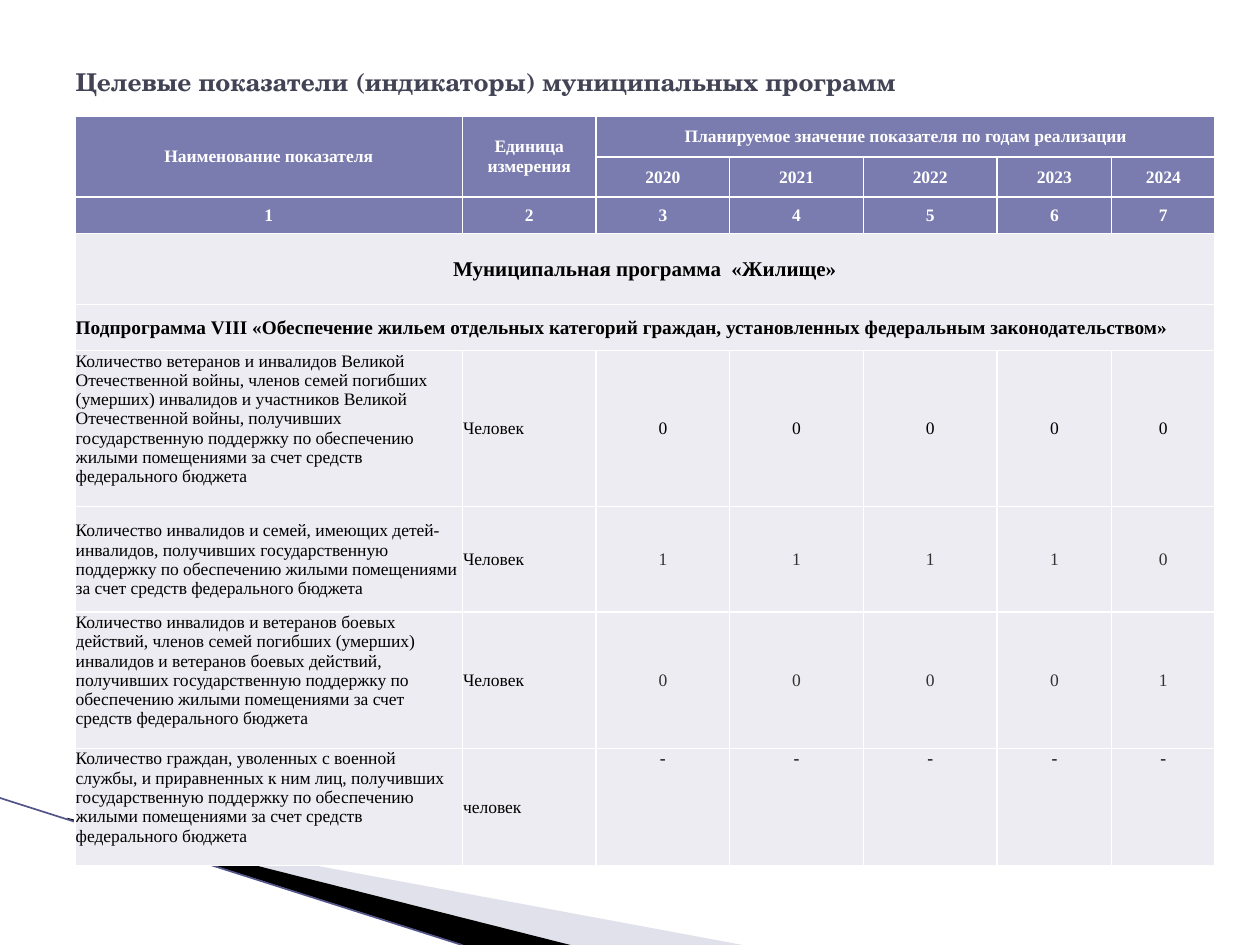
"""Build the slide with the target indicators of the housing programme."""
from dataclasses import dataclass

from lxml import etree
from pptx import Presentation
from pptx.dml.color import RGBColor
from pptx.enum.shapes import MSO_CONNECTOR
from pptx.enum.text import MSO_ANCHOR, MSO_AUTO_SIZE, PP_ALIGN
from pptx.oxml.ns import qn
from pptx.util import Pt

TOP, MIDDLE = MSO_ANCHOR.TOP, MSO_ANCHOR.MIDDLE
LEFT, CENTER, JUSTIFY = PP_ALIGN.LEFT, PP_ALIGN.CENTER, PP_ALIGN.JUSTIFY
STRAIGHT = MSO_CONNECTOR.STRAIGHT
NO_AUTOFIT = MSO_AUTO_SIZE.NONE

TITLE_FONT, TABLE_FONT = "TeX Gyre Schola", "Times New Roman"
WHITE, BLACK, GREY = "FFFFFF", "000000", "333333"
HEADER_FILL, BODY_FILL = "7A7BAE", "ECECF2"

COLUMN_WIDTHS = [221.4, 76.4, 76.4, 76.4, 76.4, 65.5, 59]
ROW_HEIGHTS = [23.4, 22.9, 21.1, 40.6, 26.3, 89.1, 60.3, 78, 66.9]
FIRST_INDICATOR_ROW = 5


@dataclass
class Style:
    size: float = 10
    color: str = BLACK
    bold: bool = False
    align: PP_ALIGN = CENTER
    anchor: MSO_ANCHOR = MIDDLE
    font: str = TABLE_FONT


@dataclass
class Heading:
    row: int
    column: int
    text: str
    style: Style
    rows: int = 1
    columns: int = 1


@dataclass
class Indicator:
    name: str
    unit: str
    values: list[str]
    name_anchor: MSO_ANCHOR = TOP
    value_color: str = BLACK
    value_anchor: MSO_ANCHOR = MIDDLE


@dataclass
class Wedge:
    points: list[tuple[float, float]]
    fill: str
    opacity: int = 100


HEADER = Style(color=WHITE, bold=True)
HEADINGS = [
    Heading(0, 0, "Наименование показателя", HEADER, rows=2),
    Heading(0, 1, "Единица измерения", HEADER, rows=2),
    Heading(0, 2, "Планируемое значение показателя по годам реализации", HEADER, columns=5),
    *[Heading(1, column, str(2018 + column), HEADER) for column in range(2, 7)],
    *[Heading(2, column, str(column + 1), HEADER) for column in range(7)],
    Heading(3, 0, "Муниципальная программа  «Жилище»", Style(12, bold=True), columns=7),
    Heading(
        4, 0,
        "Подпрограмма VIII «Обеспечение жильем отдельных категорий граждан, "
        "установленных федеральным законодательством»",
        Style(11, bold=True, align=LEFT), columns=7,
    ),
]

SUPPORT = "государственную поддержку по обеспечению жилыми помещениями за счет средств федерального бюджета"
INDICATORS = [
    Indicator(
        "Количество ветеранов и инвалидов Великой Отечественной войны, членов семей погибших "
        "(умерших) инвалидов и участников Великой Отечественной войны, получивших " + SUPPORT,
        "Человек", ["0"] * 5,
    ),
    Indicator(
        "Количество инвалидов и семей, имеющих детей-инвалидов, получивших " + SUPPORT,
        "Человек", ["1"] * 4 + ["0"], name_anchor=MIDDLE, value_color=GREY,
    ),
    Indicator(
        "Количество инвалидов и ветеранов боевых действий, членов семей погибших (умерших) "
        "инвалидов и ветеранов боевых действий, получивших " + SUPPORT,
        "Человек", ["0"] * 4 + ["1"], value_color=GREY,
    ),
    Indicator(
        "Количество граждан, уволенных с военной службы, и приравненных к ним лиц, получивших " + SUPPORT,
        "человек", ["-"] * 5, value_anchor=TOP,
    ),
]

WEDGES = [
    Wedge([(39.6, 468.5), (424.5, 540), (325, 540), (39.6, 468)], "B6B6D1", 40),
    Wedge([(38.2, 467.3), (326, 540), (265, 540), (38.9, 468)], BLACK),
]


def rgb(value: str) -> RGBColor:
    """Return the colour of a hex string."""
    return RGBColor.from_string(value)


def write(frame, text: str, style: Style) -> None:
    """Put one formatted run into a text frame."""
    frame.word_wrap = True
    paragraph = frame.paragraphs[0]
    paragraph.alignment = style.align
    run = paragraph.add_run()
    run.text = text
    run.font.name = style.font
    run.font.size = Pt(style.size)
    run.font.bold = style.bold
    run.font.color.rgb = rgb(style.color)


def draw_wedge(slide, wedge: Wedge) -> None:
    """Draw one filled wedge without an outline."""
    start, *rest = [(Pt(x), Pt(y)) for x, y in wedge.points]
    builder = slide.shapes.build_freeform(*start)
    builder.add_line_segments(rest, close=True)
    shape = builder.convert_to_shape()
    shape.shadow.inherit = False
    shape.line.fill.background()
    shape.fill.solid()
    shape.fill.fore_color.rgb = rgb(wedge.fill)
    if wedge.opacity < 100:
        color = shape.fill._xPr.find(qn("a:solidFill"))[0]
        etree.SubElement(color, qn("a:alpha"), val=str(wedge.opacity * 1000))


def draw_edge_line(slide) -> None:
    """Draw the thin line along the lower wedge."""
    line = slide.shapes.add_connector(STRAIGHT, Pt(0), Pt(456), Pt(264), Pt(540))
    line.line.color.rgb = rgb("53548A")
    line.line.width = Pt(0.95)
    etree.SubElement(line._element.spPr, qn("a:effectLst"))


def format_cell(cell, fill: str) -> None:
    """Give a cell its borders, margins and fill."""
    properties = cell._tc.get_or_add_tcPr()
    for side in ("lnL", "lnR", "lnT", "lnB"):
        border = etree.SubElement(properties, qn(f"a:{side}"), w=str(Pt(1)))
        solid = etree.SubElement(border, qn("a:solidFill"))
        etree.SubElement(solid, qn("a:srgbClr"), val=WHITE)
    cell.margin_left = cell.margin_right = cell.margin_top = Pt(0.5)
    cell.margin_bottom = Pt(0)
    cell.fill.solid()
    cell.fill.fore_color.rgb = rgb(fill)


def write_cell(cell, text: str, style: Style) -> None:
    """Write a table cell and set its vertical anchor."""
    cell.vertical_anchor = style.anchor
    write(cell.text_frame, text, style)


def draw_table(slide) -> None:
    """Draw the table of indicators by year."""
    table = slide.shapes.add_table(
        len(ROW_HEIGHTS), len(COLUMN_WIDTHS), Pt(42.8), Pt(66.2),
        Pt(sum(COLUMN_WIDTHS)), Pt(sum(ROW_HEIGHTS)),
    ).table
    for column, width in zip(table.columns, COLUMN_WIDTHS):
        column.width = Pt(width)
    for index, height in enumerate(ROW_HEIGHTS):
        table.rows[index].height = Pt(height)
        for cell in table.rows[index].cells:
            format_cell(cell, HEADER_FILL if index < 3 else BODY_FILL)
    for heading in HEADINGS:
        cell = table.cell(heading.row, heading.column)
        if heading.rows * heading.columns > 1:
            cell.merge(table.cell(heading.row + heading.rows - 1, heading.column + heading.columns - 1))
        write_cell(cell, heading.text, heading.style)
    for row, indicator in enumerate(INDICATORS, FIRST_INDICATOR_ROW):
        write_cell(table.cell(row, 0), indicator.name, Style(align=LEFT, anchor=indicator.name_anchor))
        write_cell(table.cell(row, 1), indicator.unit, Style(align=JUSTIFY))
        value_style = Style(color=indicator.value_color, anchor=indicator.value_anchor)
        for column, value in enumerate(indicator.values, 2):
            write_cell(table.cell(row, column), value, value_style)


def main() -> None:
    """Build and save the presentation."""
    presentation = Presentation()
    presentation.slide_width, presentation.slide_height = Pt(720), Pt(540)
    slide = presentation.slides.add_slide(presentation.slide_layouts[5])
    for wedge in WEDGES:
        draw_wedge(slide, wedge)
    draw_edge_line(slide)
    title = slide.shapes.title
    title.left, title.top, title.width, title.height = Pt(36), Pt(21.6), Pt(648), Pt(49.7)
    title.text_frame.auto_size = NO_AUTOFIT
    title.text_frame.vertical_anchor = MIDDLE
    write(title.text_frame, "Целевые показатели (индикаторы) муниципальных программ",
          Style(14, "424456", True, LEFT, font=TITLE_FONT))
    draw_table(slide)
    presentation.save("out.pptx")


if __name__ == "__main__":
    main()
